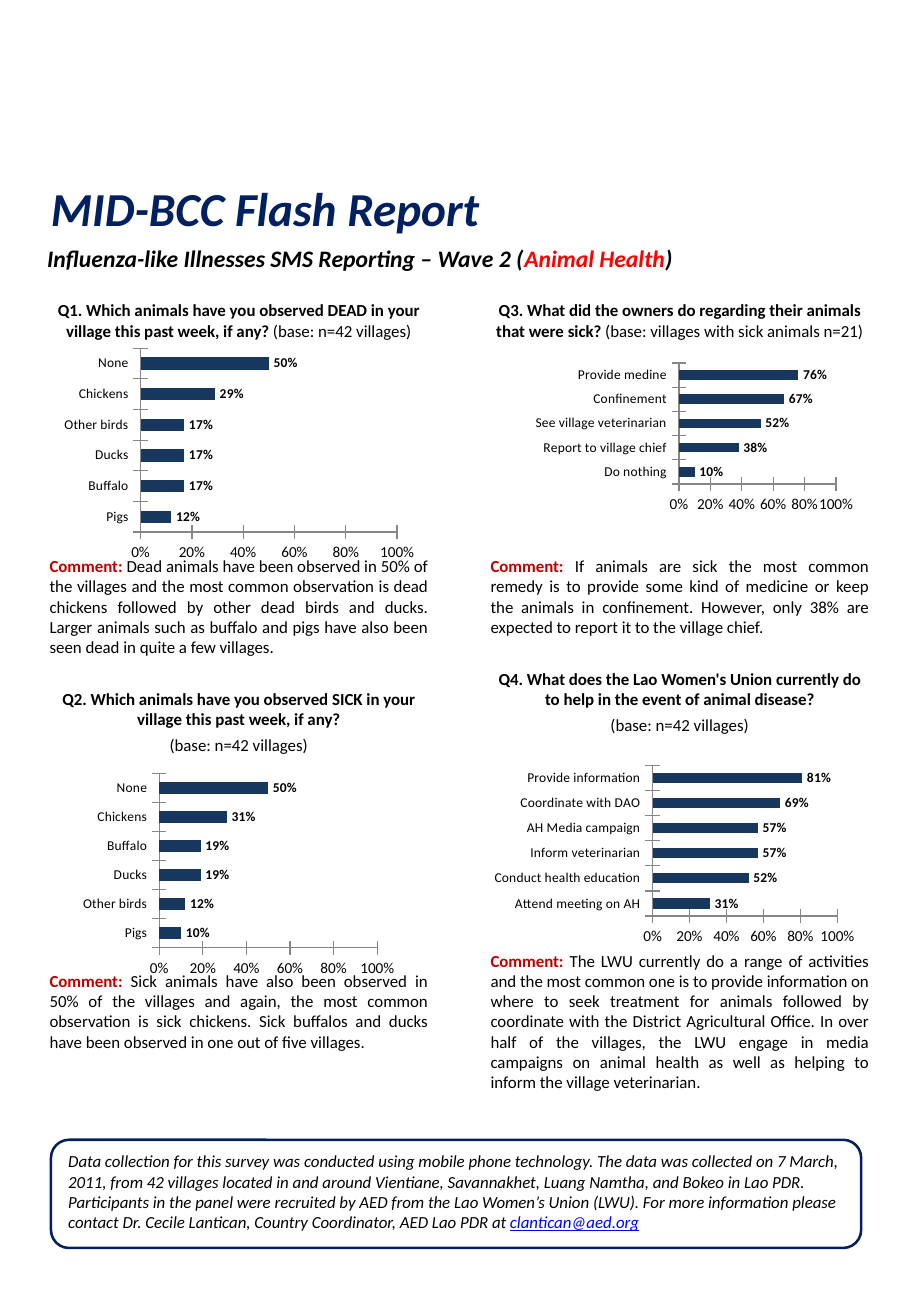
from dataclasses import dataclass

from pptx import Presentation
from pptx import util as u
from pptx.chart.data import CategoryChartData
from pptx.dml.color import RGBColor
from pptx.enum import chart as ch, shapes, text
from pptx.oxml import parse_xml
from pptx.oxml.ns import nsdecls


@dataclass(frozen=True)
class Theme:
    font: str = "Calibri"
    navy: str = "002060"
    bar: str = "17375E"
    axis: str = "868686"
    comment: str = "C00000"
    accent: str = "FF0000"
    link: str = "0000FF"
    black: str = "000000"
    white: str = "FFFFFF"
    title: int = 28
    subtitle: int = 14
    body: int = 10
    scale: int = 9
    label: int = 8
    chart: int = 18


THEME = Theme()
CENTER, JUSTIFY, LEFT = text.PP_ALIGN.CENTER, text.PP_ALIGN.JUSTIFY, text.PP_ALIGN.LEFT
QUESTION_GAP, BASE_GAP, COMMENT_GAP = 17, 2, 126


def color(value):
    return RGBColor.from_string(value)


def style(font, size, hue=THEME.black, bold=None, italic=None):
    font.name = THEME.font
    font.size = u.Pt(size)
    font.color.rgb = color(hue)
    font.bold = bold
    font.italic = italic


def add_run(paragraph, words, hue=None, bold=None, underline=None):
    run = paragraph.add_run()
    run.text = words
    run.font.bold = bold
    run.font.underline = underline
    if hue:
        run.font.color.rgb = color(hue)


def add_box(slide, left, top, width, height):
    box = slide.shapes.add_textbox(*map(u.Inches, (left, top, width, height)))
    box.text_frame.word_wrap = True
    return box.text_frame


def add_heading(slide, place, size, hue, inset=None):
    frame = add_box(slide, *place)
    frame.auto_size = text.MSO_AUTO_SIZE.SHAPE_TO_FIT_TEXT
    if inset is not None:
        frame.margin_left = frame.margin_right = u.Inches(inset)
        frame.margin_top = frame.margin_bottom = u.Inches(inset)
    heading = frame.paragraphs[0]
    heading.line_spacing = u.Pt(32)
    style(heading.font, size, hue, bold=True, italic=True)
    return heading


def add_column(slide, left, entries):
    frame = add_box(slide, left, 2.42, 3.31, 7.83)
    for index, (gap, question, base, comment) in enumerate(entries):
        asked = frame.add_paragraph() if index else frame.paragraphs[0]
        if index:
            asked.space_before = u.Pt(QUESTION_GAP)
        format_body(asked, CENTER)
        if gap:
            add_run(asked, question, bold=True)
            sample = frame.add_paragraph()
            sample.space_before = u.Pt(gap)
            format_body(sample, CENTER)
        else:
            add_run(asked, question + " ", bold=True)
            sample = asked
        add_run(sample, base)
        remark = frame.add_paragraph()
        remark.space_before = u.Pt(COMMENT_GAP)
        format_body(remark, JUSTIFY)
        add_run(remark, "Comment: ", THEME.comment, bold=True)
        add_run(remark, comment)


def format_body(paragraph, alignment):
    paragraph.alignment = alignment
    paragraph.space_after = u.Pt(1.5)
    style(paragraph.font, THEME.body)


def set_plot_area(chart, x, y, w, h):
    sizes = "".join(f'<c:{key} val="{val}"/>' for key, val in zip("xywh", (x, y, w, h)))
    layout = parse_xml(
        f'<c:layout {nsdecls("c")}><c:manualLayout><c:layoutTarget val="inner"/>'
        f'<c:xMode val="edge"/><c:yMode val="edge"/>{sizes}</c:manualLayout></c:layout>'
    )
    plot_area = chart.plots[0]._element.getparent()
    for old in plot_area.findall(layout.tag):
        plot_area.remove(old)
    plot_area.insert(0, layout)


def format_axis(axis, size):
    axis.has_major_gridlines = False
    axis.major_tick_mark = ch.XL_TICK_MARK.CROSS
    axis.format.line.color.rgb = color(THEME.axis)
    style(axis.tick_labels.font, size)


def add_answers(slide, place, shares, plot_area=None):
    data = CategoryChartData(number_format="0%")
    data.categories = list(shares)
    data.add_series("Series 1", [percent / 100 for percent in shares.values()])
    chart = slide.shapes.add_chart(
        ch.XL_CHART_TYPE.BAR_CLUSTERED, *map(u.Inches, place), data
    ).chart
    chart.has_legend = chart.has_title = False
    style(chart.font, THEME.chart)
    format_axis(chart.category_axis, THEME.label)
    scale = chart.value_axis
    format_axis(scale, THEME.scale)
    scale.minimum_scale, scale.maximum_scale, scale.major_unit = 0, 1, 0.2
    scale.tick_labels.number_format = "0%"
    scale.tick_labels.number_format_is_linked = False
    plot = chart.plots[0]
    plot.vary_by_categories = False
    plot.gap_width = 150
    bars = plot.series[0].format.fill
    bars.solid()
    bars.fore_color.rgb = color(THEME.bar)
    plot.has_data_labels = True
    labels = plot.data_labels
    labels.show_value = True
    labels.number_format = "0%"
    labels.number_format_is_linked = False
    labels.position = ch.XL_LABEL_POSITION.OUTSIDE_END
    style(labels.font, THEME.label, bold=True)
    if plot_area:
        set_plot_area(chart, *plot_area)


def add_source_note(slide):
    note = slide.shapes.add_shape(
        shapes.MSO_SHAPE.ROUNDED_RECTANGLE, *map(u.Inches, (0.42, 9.38, 6.67, 0.89))
    )
    note.shadow.inherit = False
    note.fill.solid()
    note.fill.fore_color.rgb = color(THEME.white)
    note.line.color.rgb = color(THEME.navy)
    note.line.width = u.Pt(1.5)
    note.text_frame.vertical_anchor = text.MSO_ANCHOR.TOP
    about = note.text_frame.paragraphs[0]
    about.alignment = LEFT
    about.space_after = u.Pt(10)
    style(about.font, THEME.body, italic=True)
    add_run(about, "Data collection for this survey was conducted using mobile phone technology. The data was collected on 7 March, 2011, from 42 villages located in and around Vientiane, Savannakhet, Luang Namtha, and Bokeo in Lao PDR. Participants in the panel were recruited by AED from the Lao Women’s Union (LWU). For more information please contact Dr. Cecile Lantican, Country Coordinator, AED Lao PDR at ", THEME.black)
    add_run(about, "clantican@aed.org", THEME.link, underline=True)


def main():
    report = Presentation()
    report.slide_width, report.slide_height = u.Inches(7.5), u.Inches(10.83)
    slide = report.slides.add_slide(report.slide_layouts[6])

    add_source_note(slide)
    title = add_heading(slide, (0.42, 1.5, 6.13, 0.45), THEME.title, THEME.navy, inset=0)
    add_run(title, "MID-BCC Flash Report")
    subtitle = add_heading(slide, (0.29, 1.75, 5.96, 0.55), THEME.subtitle, THEME.black)
    add_run(subtitle, "Influenza-like Illnesses SMS Reporting – Wave 2 (")
    add_run(subtitle, "Animal Health", THEME.accent)
    add_run(subtitle, ")")

    add_column(slide, 0.31, [
        (0, "Q1. Which animals have you observed DEAD in your village this past week, if any?", "(base: n=42 villages)",
         "Dead animals have been observed in 50% of the villages and the most common observation is dead chickens followed by other dead birds and ducks. Larger animals such as buffalo and pigs have also been seen dead in quite a few villages."),
        (BASE_GAP, "Q2. Which animals have you observed SICK in your village this past week, if any?", "(base: n=42 villages)",
         "Sick animals have also been observed in 50% of the villages and again, the most common observation is sick chickens. Sick buffalos and ducks have been observed in one out of five villages."),
    ])
    add_column(slide, 3.94, [
        (0, "Q3. What did the owners do regarding their animals that were sick?", "(base: villages with sick animals n=21)",
         "If animals are sick the most common remedy is to provide some kind of medicine or keep the animals in confinement. However, only 38% are expected to report it to the village chief."),
        (BASE_GAP, "Q4. What does the Lao Women's Union currently do to help in the event of animal disease?", "(base: n=42 villages)",
         "The LWU currently do a range of activities and the most common one is to provide information on where to seek treatment for animals followed by coordinate with the District Agricultural Office. In over half of the villages, the LWU engage in media campaigns on animal health as well as helping to inform the village veterinarian."),
    ])

    add_answers(slide, (4.05, 2.83, 3.08, 1.58), {
        "Do nothing": 10, "Report to village chief": 38, "See village veterinarian": 52,
        "Confinement": 67, "Provide medine": 76}, (0.5, 0.1, 0.42, 0.63))
    add_answers(slide, (4.01, 6.08, 3.17, 2), {
        "Attend meeting on AH": 31, "Conduct health education": 52, "Inform veterinarian": 57,
        "AH Media campaign": 57, "Coordinate with DAO": 69, "Provide information": 81}, (0.43, 0.11, 0.48, 0.62))
    add_answers(slide, (0.63, 6.33, 2.67, 1.75), {
        "Pigs": 10, "Other birds": 12, "Ducks": 19, "Buffalo": 19, "Chickens": 31, "None": 50})
    add_answers(slide, (0.47, 2.83, 3, 1.83), {
        "Pigs": 12, "Buffalo": 17, "Ducks": 17, "Other birds": 17, "Chickens": 29, "None": 50})

    report.save("out.pptx")


if __name__ == "__main__":
    main()
